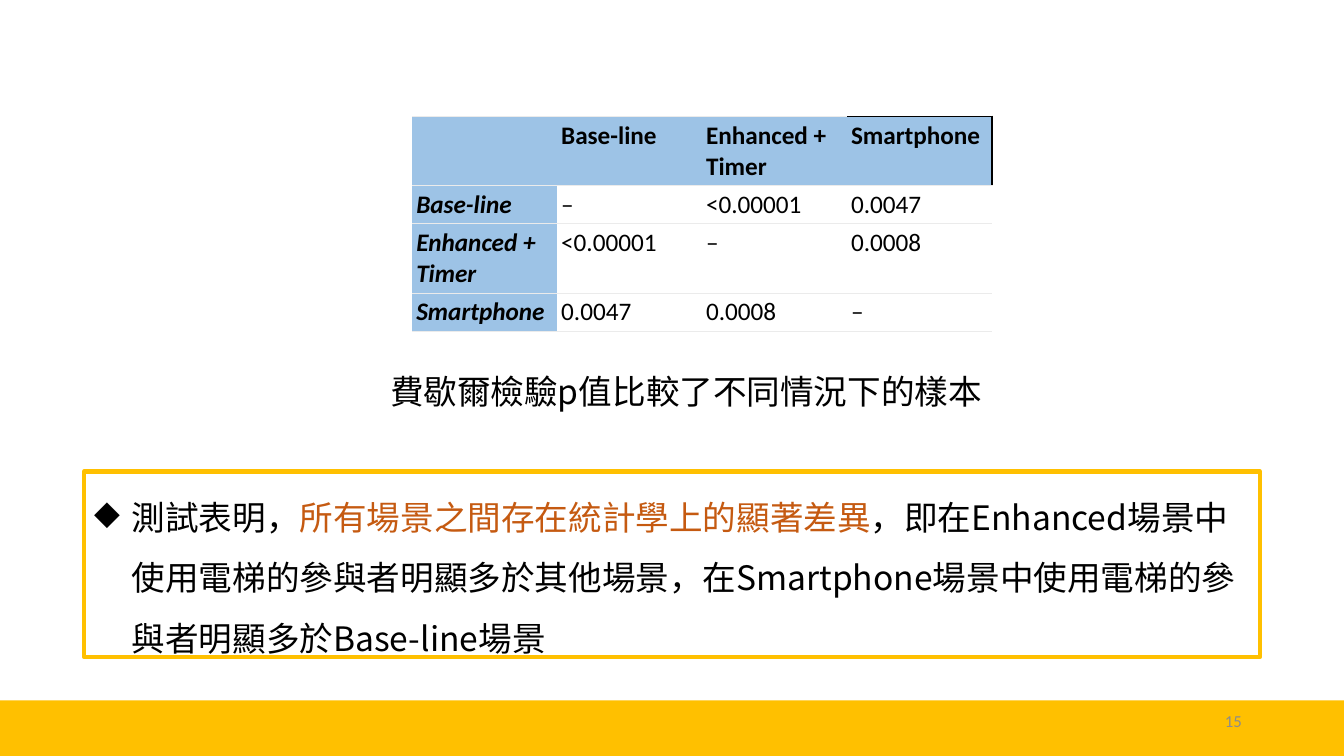
from lxml.etree import SubElement
from pptx import Presentation
from pptx.dml.color import RGBColor
from pptx.enum.shapes import MSO_SHAPE as Shape
from pptx.enum.text import MSO_ANCHOR as Anchor, PP_ALIGN as Align
from pptx.oxml.ns import qn
from pptx.util import Cm, Pt

COLORS = {
    "gold": "FFC000", "header": "9DC3E6", "rule": "EBEBEB",
    "text": "000000", "accent": "C55A11", "number": "8C8C8C",
}
LATIN, CHINESE = "Calibri", "Noto Sans CJK SC"
SCENES = ["Base-line", "Enhanced + Timer", "Smartphone"]
P_VALUES = [
    ["–", "<0.00001", "0.0047"],
    ["<0.00001", "–", "0.0008"],
    ["0.0047", "0.0008", "–"],
]
ROW_HEIGHTS = [1.74, 0.97, 1.74, 0.98]
FINDING = [
    ("測試表明，", "text"),
    ("所有場景之間存在統計學上的顯著差異", "accent"),
    ("，即在Enhanced場景中使用電梯的參與者明顯多於其他場景，"
     "在Smartphone場景中使用電梯的參與者明顯多於Base-line場景", "text"),
]


def rgb(name):
    return RGBColor.from_string(COLORS[name])


def add_run(paragraph, text, size, font_name, color="text", bold=False, italic=False):
    run = paragraph.add_run()
    run.text = text
    font = run.font
    font.size, font.bold, font.italic = Pt(size), bold, italic
    font.color.rgb = rgb(color)
    font.name = font_name
    SubElement(run._r.get_or_add_rPr(), qn("a:ea"), typeface=font_name)


def add_text_box(slide, left, top, width, height):
    box = slide.shapes.add_textbox(Cm(left), Cm(top), Cm(width), Cm(height))
    box.text_frame.word_wrap = True
    return box


def set_borders(cell, **borders):
    """Draw the given sides (L, R, T, B) as (colour, points); clear the rest."""
    properties = cell._tc.get_or_add_tcPr()
    for side in "LRTB":
        color, points = borders.get(side, (None, 0))
        line = SubElement(properties, qn(f"a:ln{side}"), w=str(Pt(points)))
        if color:
            fill = SubElement(line, qn("a:solidFill"))
            SubElement(fill, qn("a:srgbClr"), val=COLORS[color])
        else:
            SubElement(line, qn("a:noFill"))


def add_p_value_table(slide, left, top, width):
    rows = [[""] + SCENES]
    rows += [[scene] + values for scene, values in zip(SCENES, P_VALUES)]
    count = len(rows)
    table = slide.shapes.add_table(count, count, Cm(left), Cm(top), Cm(width),
                                   Cm(sum(ROW_HEIGHTS))).table
    table.horz_banding = False
    for column in table.columns:
        column.width = Cm(width / count)
    for row_index, texts in enumerate(rows):
        table.rows[row_index].height = Cm(ROW_HEIGHTS[row_index])
        for column_index, text in enumerate(texts):
            cell = table.cell(row_index, column_index)
            cell.margin_left = cell.margin_right = Cm(0.1)
            cell.margin_top = cell.margin_bottom = Cm(0.1)
            borders = {"T": ("rule", 0.6), "B": ("rule", 0.6)}
            if row_index == 0 and column_index == count - 1:
                borders.update(T=("text", 1.25), R=("text", 1))
            set_borders(cell, **borders)
            is_heading = row_index == 0 or column_index == 0
            if is_heading:
                cell.fill.solid()
                cell.fill.fore_color.rgb = rgb("header")
            else:
                cell.fill.background()
            if text:
                add_run(cell.text_frame.paragraphs[0], text, 18, LATIN,
                        bold=is_heading, italic=column_index == 0)


def add_caption(slide, left, top, width, height):
    frame = add_text_box(slide, left, top, width, height).text_frame
    frame.margin_left, frame.margin_right = Cm(1.4), 0
    paragraph = frame.paragraphs[0]
    paragraph.line_spacing = 1.5
    add_run(paragraph, "費歇爾檢驗p值比較了不同情況下的樣本", 24, CHINESE)


def add_finding(slide, left, top, width, height):
    box = add_text_box(slide, left, top, width, height)
    box.line.color.rgb = rgb("gold")
    box.line.width = Pt(3)
    paragraph = box.text_frame.paragraphs[0]
    paragraph.line_spacing = 1.5
    properties = paragraph._p.get_or_add_pPr()
    properties.set("marL", str(Cm(0.95)))
    properties.set("indent", str(-Cm(0.95)))
    SubElement(properties, qn("a:buChar"), char="◆")
    for text, color in FINDING:
        add_run(paragraph, text, 24, CHINESE, color)


def add_footer(slide, left, top, width, height):
    band = slide.shapes.add_shape(Shape.RECTANGLE, Cm(left), Cm(top), Cm(width), Cm(height))
    band.shadow.inherit = False
    band.fill.solid()
    band.fill.fore_color.rgb = rgb("gold")
    band.line.fill.background()
    frame = add_text_box(slide, left + 23.97, top, 7.62, 1.02).text_frame
    frame.vertical_anchor = Anchor.MIDDLE
    paragraph = frame.paragraphs[0]
    paragraph.alignment = Align.RIGHT
    add_run(paragraph, "15", 12, LATIN, "number")


def main():
    presentation = Presentation()
    presentation.slide_width, presentation.slide_height = Cm(33.87), Cm(19.05)
    slide = presentation.slides.add_slide(presentation.slide_layouts[6])
    add_footer(slide, -0.04, 17.65, 33.94, 1.4)
    add_finding(slide, 2.12, 11.88, 29.63, 4.68)
    add_p_value_table(slide, 10.39, 2.93, 14.61)
    add_caption(slide, 8.43, 8.72, 16.97, 1.6)
    presentation.save("out.pptx")


if __name__ == "__main__":
    main()
